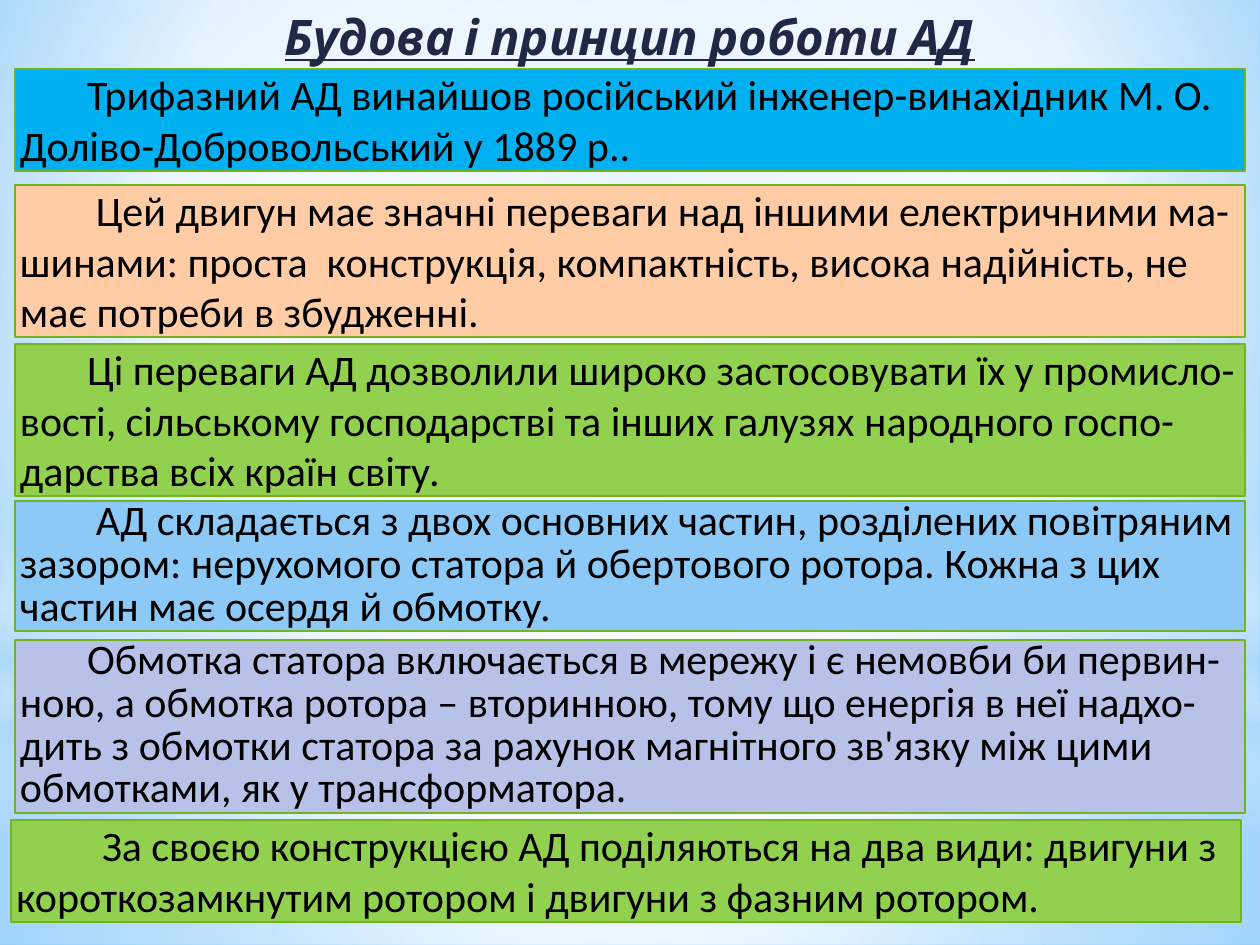
"""Builds the slide on the design and working principle of the induction motor."""
from lxml.etree import SubElement
from pptx import Presentation
from pptx.dml.color import RGBColor
from pptx.enum.shapes import MSO_SHAPE
from pptx.enum.text import MSO_ANCHOR, MSO_AUTO_SIZE, PP_ALIGN
from pptx.oxml.ns import qn
from pptx.util import Pt

PX = 914400 / 126
THEME = {
    "title": {"name": "Cabin", "size": Pt(28), "bold": True, "italic": True, "underline": True},
    "body": {"name": "Calibri", "size": Pt(24)},
    "title_color": "212745",
    "body_color": "000000",
    "border": "72B41D",
    "border_width": Pt(1.25),
    "white": "FFFFFF",
    "sky": "B4DCFA",
    "cyan": "00B0F0",
    "peach": "FFCCA6",
    "green": "92D050",
    "blue": "8CC9F7",
    "lilac": "B8C2E9",
    "backdrop_edge": "9ED5FF",
    "backdrop_core": "5BB9FF",
}


def paint_gradient(element, stops, focus):
    """Swap the solid fill for a gradient, circular around focus or vertical without it."""
    solid = next(element.iter(qn("a:solidFill")))
    gradient = solid.makeelement(qn("a:gradFill"), {"rotWithShape": "1"})
    stop_list = SubElement(gradient, qn("a:gsLst"))
    for position, color, opacity in stops:
        stop = SubElement(stop_list, qn("a:gs"), pos=str(position * 1000))
        tint = SubElement(stop, qn("a:srgbClr"), val=THEME[color])
        if opacity < 100:
            SubElement(tint, qn("a:alpha"), val=str(opacity * 1000))
    if focus:
        circle = SubElement(gradient, qn("a:path"), path="circle")
        edges = {side: str(value * 1000) for side, value in zip("ltrb", focus)}
        SubElement(circle, qn("a:fillToRect"), edges)
    else:
        SubElement(gradient, qn("a:lin"), ang="5400000", scaled="0")
    solid.getparent().replace(solid, gradient)


def write_text(shape, text, font, color, insets, alignment, spacing=None, indent=0):
    """Put one formatted paragraph into a shape that grows with its text."""
    frame = shape.text_frame
    horizontal, vertical = (round(inset * PX) for inset in insets)
    frame_format = {
        "word_wrap": True, "auto_size": MSO_AUTO_SIZE.SHAPE_TO_FIT_TEXT,
        "vertical_anchor": MSO_ANCHOR.TOP,
        "margin_left": horizontal, "margin_right": horizontal,
        "margin_top": vertical, "margin_bottom": vertical,
    }
    for name, value in frame_format.items():
        setattr(frame, name, value)
    paragraph = frame.paragraphs[0]
    paragraph.alignment = alignment
    paragraph.line_spacing = spacing
    if indent:
        properties = paragraph._p.get_or_add_pPr()
        properties.set("marL", "0")
        properties.set("indent", str(round(indent * PX)))
    run = paragraph.add_run()
    run.text = text
    for name, value in THEME[font].items():
        setattr(run.font, name, value)
    run.font.color.rgb = RGBColor.from_string(THEME[color])


presentation = Presentation()
presentation.slide_width = round(1260 * PX)
presentation.slide_height = round(945 * PX)
slide = presentation.slides.add_slide(presentation.slide_layouts[6])

slide.background.fill.solid()
slide.background.fill.fore_color.rgb = RGBColor.from_string(THEME["white"])
paint_gradient(
    slide.element,
    [(0, "backdrop_edge", 100), (60, "white", 100), (100, "backdrop_core", 100)],
    (20, 10, 20, 60),
)

CENTER = (50, 50, 50, 50)
glows = [
    (MSO_SHAPE.RECTANGLE, 703, 242, CENTER,
     [(0, "white", 91), (37, "white", 76), (100, "sky", 79)]),
    (MSO_SHAPE.RECTANGLE, 0, 703, CENTER,
     [(0, "white", 89), (48, "white", 62), (100, "sky", 79)]),
    (MSO_SHAPE.RECTANGLE, 519, 315, None,
     [(0, "white", 0), (29, "white", 30), (45, "sky", 40),
      (55, "white", 26), (65, "sky", 60), (100, "white", 0)]),
    (MSO_SHAPE.OVAL, 221, 703, CENTER, [(0, "white", 100), (56, "white", 0)]),
]
for preset, top, height, focus, stops in glows:
    glow = slide.shapes.add_shape(preset, 0, round(top * PX), round(1260 * PX), round(height * PX))
    glow.shadow.inherit = False
    glow.line.fill.background()
    glow.fill.solid()
    glow.fill.fore_color.rgb = RGBColor.from_string(THEME["white"])
    paint_gradient(glow.element, stops, focus)

title = slide.shapes.add_textbox(round(15 * PX), 0, round(1230 * PX), round(72 * PX))
write_text(title, "Будова і принцип роботи АД", "title", "title_color", (0, 6), PP_ALIGN.CENTER)

panels = [
    (15, 69, 102, "cyan", None, 67,
     "Трифазний АД винайшов російський інженер-винахідник М. О. "
     "Доліво-Добровольський у 1889 р.."),
    (15, 185, 152, "peach", None, 76,
     "Цей двигун має значні переваги над іншими електричними ма-шинами: "
     "проста  конструкція, компактність, висока надійність, не має потреби в збудженні."),
    (15, 344, 152, "green", None, 67,
     "Ці переваги АД дозволили широко застосовувати їх у промисло-вості, "
     "сільському господарстві та інших галузях народного госпо-дарства всіх країн світу."),
    (15, 501, 130, "blue", 0.85, 76,
     "АД складається з двох основних частин, розділених повітряним зазором: "
     "нерухомого статора й обертового ротора. Кожна з цих частин має осердя й обмотку."),
    (15, 640, 173, "lilac", 0.85, 67,
     "Обмотка статора включається в мережу і є немовби би первин-ною, "
     "а обмотка ротора – вторинною, тому що енергія в неї надхо-дить з обмотки статора "
     "за рахунок магнітного зв'язку між цими обмотками, як у трансформатора."),
    (11, 820, 102, "green", None, 86,
     "За своєю конструкцією АД поділяються на два види: двигуни з "
     "короткозамкнутим ротором і двигуни з фазним ротором."),
]
for left, top, height, color, spacing, indent, text in panels:
    panel = slide.shapes.add_shape(
        MSO_SHAPE.RECTANGLE, round(left * PX), round(top * PX), round(1230 * PX), round(height * PX)
    )
    panel.shadow.inherit = False
    panel.fill.solid()
    panel.fill.fore_color.rgb = RGBColor.from_string(THEME[color])
    panel.line.color.rgb = RGBColor.from_string(THEME["border"])
    panel.line.width = THEME["border_width"]
    write_text(panel, text, "body", "body_color", (5, 0), PP_ALIGN.LEFT, spacing, indent)

presentation.save("out.pptx")
